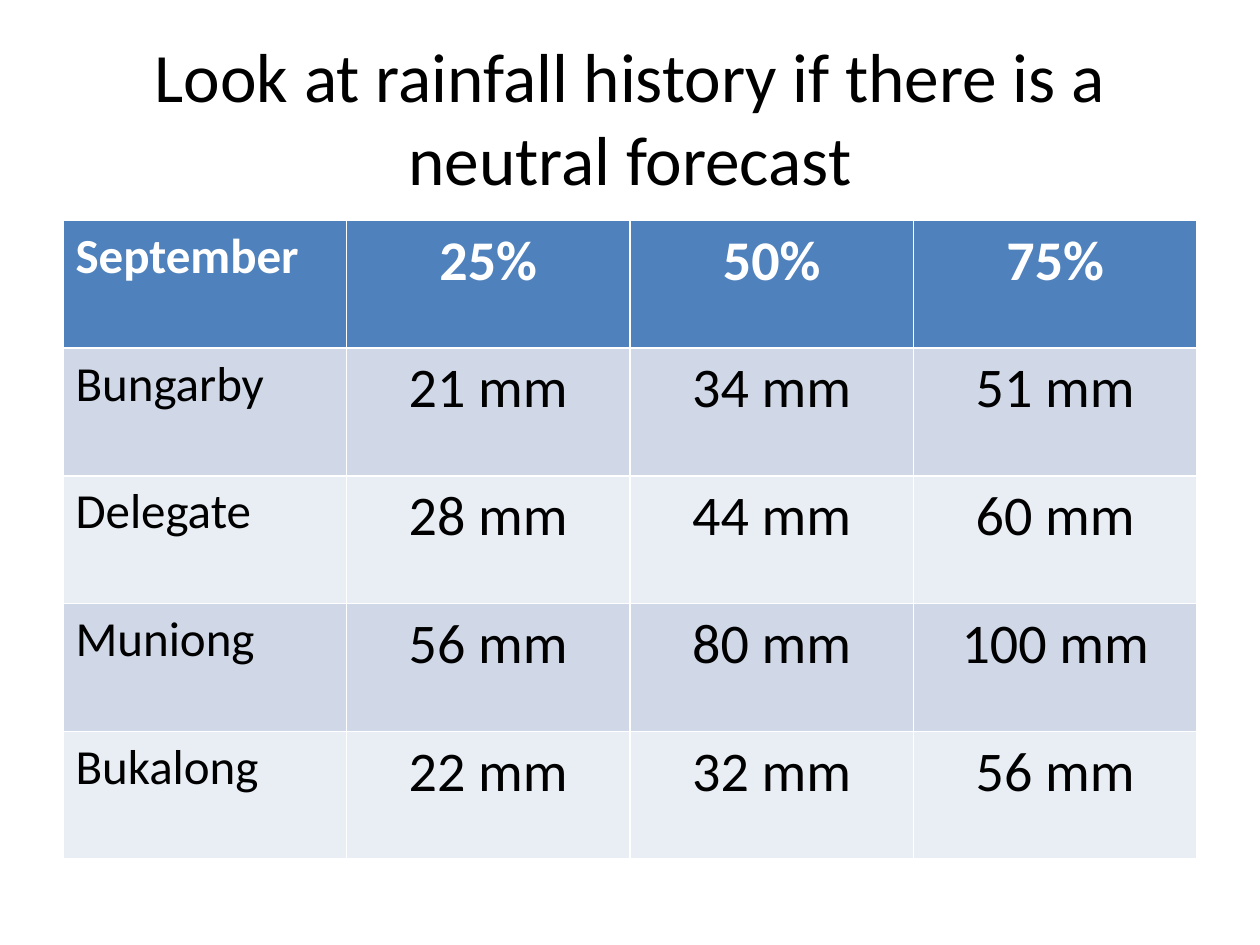
import pptx
import pptx.dml.color
import pptx.enum.text
import pptx.util

Pt = pptx.util.Pt
RGBColor = pptx.dml.color.RGBColor
PP_ALIGN = pptx.enum.text.PP_ALIGN

BLACK = RGBColor(0x00, 0x00, 0x00)
WHITE = RGBColor(0xFF, 0xFF, 0xFF)
HEADER_BLUE = RGBColor(0x4F, 0x81, 0xBD)
BAND_DARK = RGBColor(0xD0, 0xD8, 0xE8)
BAND_LIGHT = RGBColor(0xE9, 0xED, 0xF4)

FONT = "Calibri"
TITLE = "Look at rainfall history if there is a neutral forecast"
RAINFALL = [
    ("September", "25%", "50%", "75%"),
    ("Bungarby", "21 mm", "34 mm", "51 mm"),
    ("Delegate", "28 mm", "44 mm", "60 mm"),
    ("Muniong", "56 mm", "80 mm", "100 mm"),
    ("Bukalong", "22 mm", "32 mm", "56 mm"),
]


def format_paragraph(paragraph, size, color, bold, alignment):
    """Align a paragraph and set the font of its runs."""
    paragraph.alignment = alignment
    for run in paragraph.runs:
        run.font.name = FONT
        run.font.size = Pt(size)
        run.font.bold = bold
        run.font.color.rgb = color


def place_title(slide, left, top, width, height):
    """Move and format the title placeholder."""
    title = slide.shapes.title
    title.left, title.top = Pt(left), Pt(top)
    title.width, title.height = Pt(width), Pt(height)
    text_frame = title.text_frame
    text_frame.text = TITLE
    text_frame.word_wrap = True
    text_frame.auto_size = pptx.enum.text.MSO_AUTO_SIZE.NONE
    text_frame.vertical_anchor = pptx.enum.text.MSO_ANCHOR.MIDDLE
    format_paragraph(text_frame.paragraphs[0], 39.6, BLACK, False, PP_ALIGN.CENTER)


def place_rainfall_table(slide, left, top, width, height):
    """Add the rainfall table with a header row and banded body rows."""
    table = slide.shapes.add_table(
        len(RAINFALL), len(RAINFALL[0]), Pt(left), Pt(top), Pt(width), Pt(height)
    ).table
    for row_index, values in enumerate(RAINFALL):
        is_header = row_index == 0
        band = BAND_DARK if row_index % 2 else BAND_LIGHT
        for column_index, value in enumerate(values):
            is_label = column_index == 0
            cell = table.cell(row_index, column_index)
            cell.text_frame.text = value
            cell.fill.solid()
            cell.fill.fore_color.rgb = HEADER_BLUE if is_header else band
            format_paragraph(
                cell.text_frame.paragraphs[0],
                28 if is_label else 32,
                WHITE if is_header else BLACK,
                is_header,
                PP_ALIGN.LEFT if is_label else PP_ALIGN.CENTER,
            )


def main():
    """Build the rainfall history slide and save it."""
    presentation = pptx.Presentation()
    presentation.slide_width, presentation.slide_height = Pt(720), Pt(540)
    slide = presentation.slides.add_slide(presentation.slide_layouts[5])
    place_title(slide, 36, 21.6, 648, 90)
    place_rainfall_table(slide, 36, 126, 648, 365)
    presentation.save("out.pptx")


if __name__ == "__main__":
    main()
